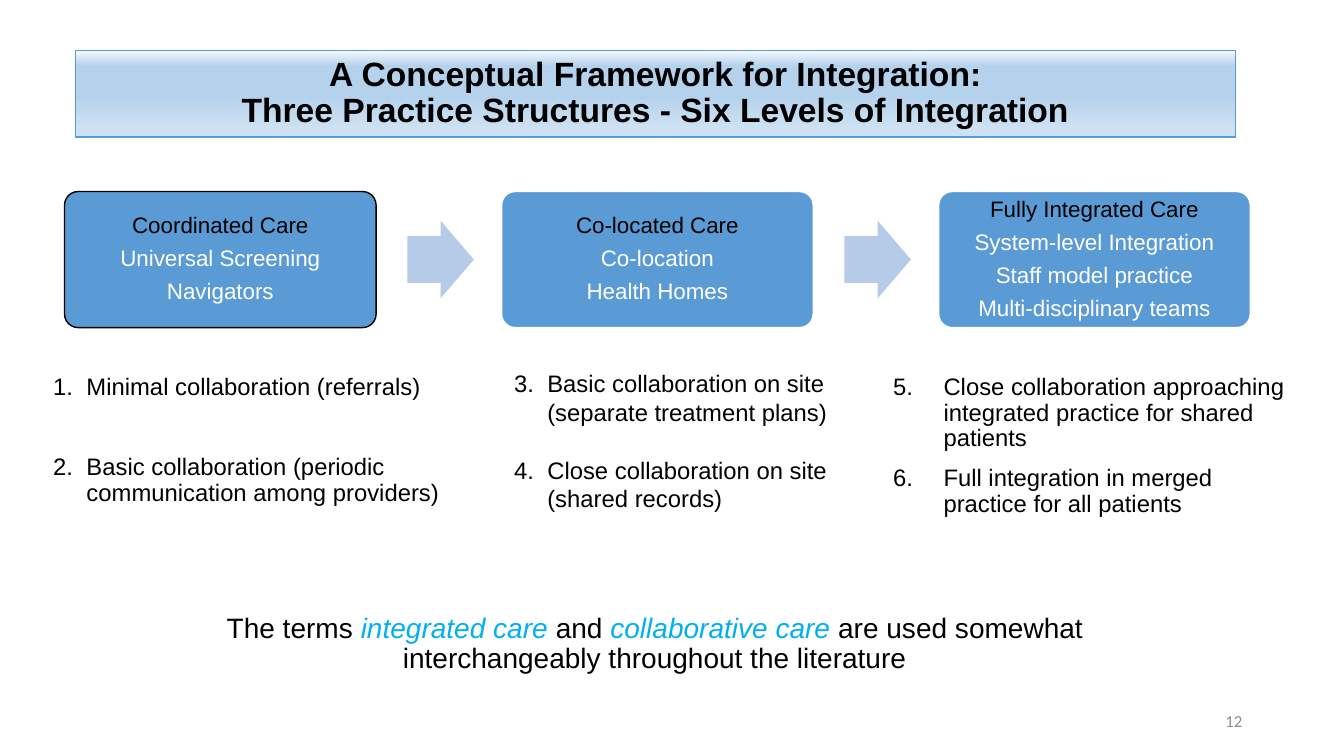
from copy import deepcopy
from pptx import Presentation
from pptx.dml.color import RGBColor
from pptx.enum.shapes import MSO_SHAPE
from pptx.enum.text import MSO_ANCHOR, PP_ALIGN
from pptx.oxml.ns import qn
from pptx.util import Inches, Pt

RECT, ROUND, ARROW = MSO_SHAPE.RECTANGLE, MSO_SHAPE.ROUNDED_RECTANGLE, MSO_SHAPE.RIGHT_ARROW
LEFT, CENTER, RIGHT = PP_ALIGN.LEFT, PP_ALIGN.CENTER, PP_ALIGN.RIGHT
TOP, MIDDLE = MSO_ANCHOR.TOP, MSO_ANCHOR.MIDDLE

BLACK, WHITE = RGBColor(0, 0, 0), RGBColor(255, 255, 255)
BLUE, PALE = RGBColor(0x5B, 0x9B, 0xD5), RGBColor(0xB5, 0xCB, 0xE7)
CYAN, GREY = RGBColor(0, 0xB0, 0xF0), RGBColor(0x8C, 0x8C, 0x8C)
FADE = [
    (0, RGBColor(0xF7, 0xFA, 0xFD)),
    (0.18, RGBColor(0xB5, 0xD2, 0xEC)),
    (0.53, RGBColor(0xB5, 0xD2, 0xEC)),
    (0.91, RGBColor(0xCE, 0xE1, 0xF2)),
]

# Content
TITLE = "A Conceptual Framework for Integration:\vThree Practice Structures - Six Levels of Integration"
CARDS = [
    (BLACK, ["Coordinated Care", "Universal Screening", "Navigators"]),
    (WHITE, ["Co-located Care", "Co-location", "Health Homes"]),
    (WHITE, ["Fully Integrated Care", "System-level Integration",
             "Staff model practice", "Multi-disciplinary teams"]),
]
# Levels: box, first number, indent, line spacing, gap before each item, items
LEVELS = [
    ((0.43, 3.67, 4.3, 1.47), 1, 0.33, 0.9, (10, 39),
     ["Minimal collaboration (referrals)",
      "Basic collaboration (periodic communication among providers)"]),
    ((5, 3.61, 3.35, 1.53), 3, 0.33, 1.0, (0, 21),
     ["Basic collaboration on site (separate treatment plans)",
      "Close collaboration on site (shared records)"]),
    ((8.76, 3.67, 4.23, 1.68), 5, 0.5, 0.9, (10, 10),
     ["Close collaboration approaching integrated practice for shared patients",
      "Full integration in merged practice for all patients"]),
]
NOTE = [("The terms ", False), ("integrated care ", True), ("and ", False),
        ("collaborative care ", True),
        ("are used somewhat interchangeably throughout the literature", False)]
PAGE = "12"

# Grid of the card row, in inches
START, STEP, ROW = 0.64, 4.335, 1.9
WIDE, HIGH = 3.09, 1.35
HEAD_X, HEAD_W, HEAD_H = 3.4, 0.66, 0.77

deck = Presentation()
deck.slide_width, deck.slide_height = Inches(13.33), Inches(7.5)
slide = deck.slides.add_slide(deck.slide_layouts[6])


def add_form(kind, box, fill=None, line=None, width=1):
    form = slide.shapes.add_shape(kind, *map(Inches, box))
    form.shadow.inherit = False
    if fill is not None:
        form.fill.solid()
        form.fill.fore_color.rgb = fill
    if line is None:
        form.line.fill.background()
    else:
        form.line.color.rgb = line
        form.line.width = Pt(width)
    return form


def add_box(box, anchor=TOP):
    frame = slide.shapes.add_textbox(*map(Inches, box)).text_frame
    frame.word_wrap = True
    frame.vertical_anchor = anchor
    return frame


def style(para, size, color=BLACK, align=CENTER, space=0.9, face="Arial"):
    para.alignment, para.line_spacing = align, space
    para.font.name, para.font.size = face, Pt(size)
    para.font.color.rgb = color


def paras(frame, lines):
    frame.text = "\n".join(lines)
    return frame.paragraphs


def number(para, first, indent):
    props = para._p.get_or_add_pPr()
    props.set("marL", str(Inches(indent)))
    props.set("indent", str(-Inches(indent)))
    mark = props.makeelement(
        qn("a:buAutoNum"), {"type": "arabicPeriod", "startAt": str(first)})
    props.insert_element_before(mark, "a:tabLst", "a:defRPr", "a:extLst")


# Title band with a four-stop fade
band = add_form(RECT, (0.75, 0.5, 11.5, 0.86), line=BLUE, width=0.75)
band.fill.gradient()
band.fill.gradient_angle = 270
stops = band._element.spPr.find(qn("a:gradFill")).find(qn("a:gsLst"))
while len(stops) < len(FADE):
    stops.append(deepcopy(stops[0]))
for stop, (place, color) in zip(band.fill.gradient_stops, FADE):
    stop.position, stop.color.rgb = place, color
band.text_frame.text = TITLE
band.text_frame.vertical_anchor = MIDDLE
head = band.text_frame.paragraphs[0]
style(head, 24)
head.font.bold = True

# Practice structures and the arrows between them
for i, (edge, lines) in enumerate(CARDS):
    left = START + i * STEP
    card = add_form(ROUND, (left, ROW, WIDE, HIGH), BLUE, edge)
    card.adjustments[0] = 0.1
    frame = card.text_frame
    frame.vertical_anchor = MIDDLE
    frame.margin_top = frame.margin_bottom = Inches(0.07)
    for j, para in enumerate(paras(frame, lines)):
        style(para, 16, WHITE if j else BLACK)
        para.space_after = Pt(6.4)
    if i < len(CARDS) - 1:
        arrow = add_form(
            ARROW, (left + HEAD_X, ROW + (HIGH - HEAD_H) / 2, HEAD_W, HEAD_H), PALE)
        arrow.adjustments[0], arrow.adjustments[1] = 0.6, 0.5

# Six levels of integration
for box, first, indent, space, gaps, items in LEVELS:
    for para, gap in zip(paras(add_box(box), items), gaps):
        style(para, 17, align=LEFT, space=space)
        para.space_before = Pt(gap)
        number(para, first, indent)

# Note on terms
note = add_box((1.13, 6.04, 10.73, 0.71)).paragraphs[0]
style(note, 20)
note.space_before = Pt(10)
for text, term in NOTE:
    run = note.add_run()
    run.text = text
    if term:
        run.font.italic = True
        run.font.color.rgb = CYAN

# Page number
page = paras(add_box((9.42, 6.95, 3, 0.4), MIDDLE), [PAGE])[0]
style(page, 12, GREY, RIGHT, 1.0, "Calibri")

deck.save("out.pptx")
